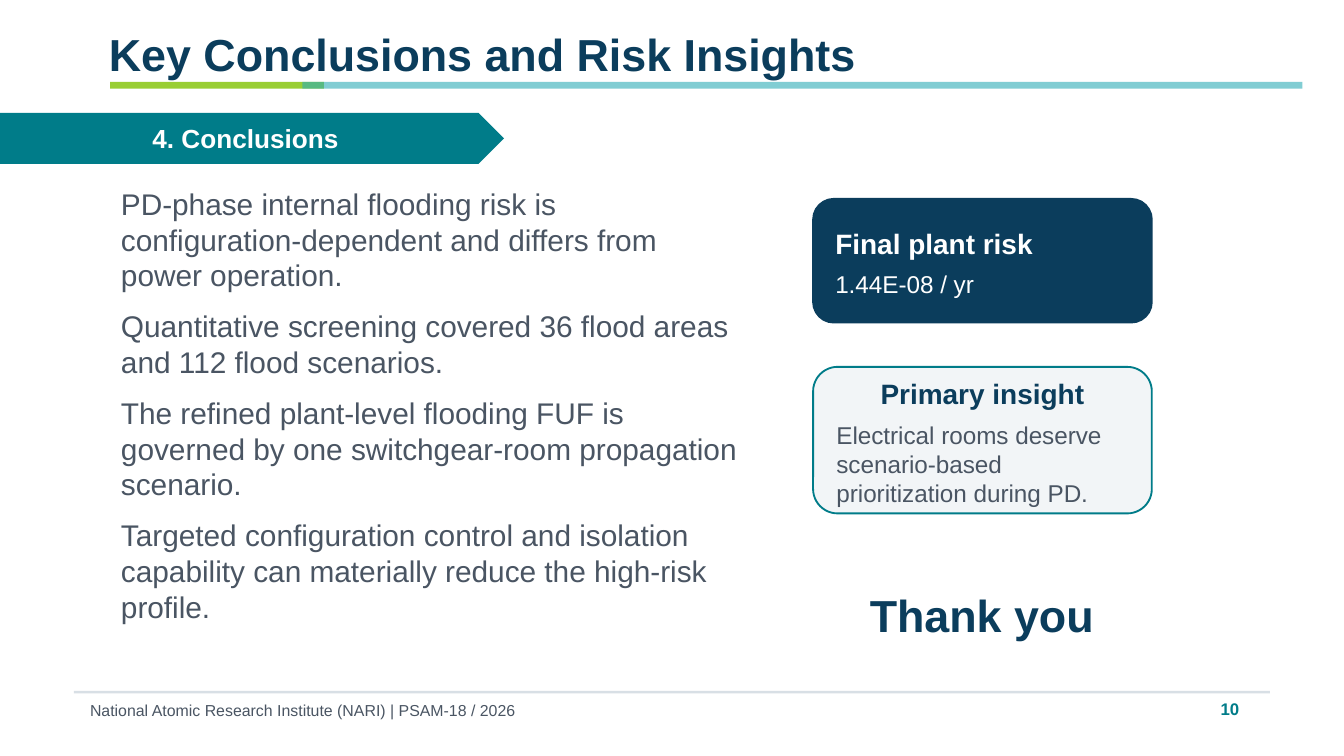
from lxml import etree
from pptx import Presentation
from pptx import util as u
from pptx.dml.color import RGBColor
from pptx.enum import shapes, text
from pptx.oxml.ns import qn

NAVY, TEAL, GREY, WHITE = "0B3D5C", "007C89", "4A5563", "FFFFFF"
KIND = shapes.MSO_SHAPE
ALIGN = text.PP_ALIGN
TIGHT = (0.05, 0.02, 0.05, 0.02)

POINTS = [
    "PD-phase internal flooding risk is configuration-dependent and differs from power operation.",
    "Quantitative screening covered 36 flood areas and 112 flood scenarios.",
    "The refined plant-level flooding FUF is governed by one switchgear-room propagation scenario.",
    "Targeted configuration control and isolation capability can materially reduce the high-risk profile.",
]


def paint(target, color):
    target.rgb = RGBColor.from_string(color)


def inset(frame, sides):
    frame.margin_left, frame.margin_top, frame.margin_right, frame.margin_bottom = map(u.Inches, sides)


def style(para, size, color, bold=False, align=ALIGN.LEFT):
    para.alignment = align
    for run in para.runs:
        run.font.name = "Arial"
        run.font.size = u.Pt(size)
        run.font.bold = bold
        paint(run.font.color, color)


def add_block(slide, kind, box, fill, line=None, alpha=None):
    """Add a filled shape; alpha is its opacity in percent."""
    block = slide.shapes.add_shape(kind, *map(u.Inches, box))
    block.shadow.inherit = False
    block.fill.solid()
    paint(block.fill.fore_color, fill)
    if alpha:
        tone = block.element.spPr.find(qn("a:solidFill"))[0]
        etree.SubElement(tone, qn("a:alpha")).set("val", str(alpha * 1000))
    if line:
        paint(block.line.color, line)
        block.line.width = u.Pt(1)
    else:
        block.line.fill.background()
    return block


def add_label(slide, box, lines, size, color, bold=False, align=ALIGN.LEFT, sides=TIGHT, after=0):
    frame = slide.shapes.add_textbox(*map(u.Inches, box)).text_frame
    frame.word_wrap = True
    frame.auto_size = text.MSO_AUTO_SIZE.SHAPE_TO_FIT_TEXT
    inset(frame, sides)
    frame.text = "\n".join(lines)
    for para in frame.paragraphs:
        style(para, size, color, bold, align)
        para.space_after = u.Pt(after)


def add_header(slide, left, top, title):
    rule = top + 0.43
    add_block(slide, KIND.RECTANGLE, (left + 0.06, rule, 1.59, 0.05), "80C201", alpha=80)
    add_block(slide, KIND.RECTANGLE, (left + 1.49, rule, 7.44, 0.05), "2DADB6", alpha=60)
    add_label(slide, (left, top, 8.45, 0.38), [title], 24, NAVY, True)


def add_banner(slide, box, title):
    frame = add_block(slide, KIND.PENTAGON, box, TEAL).text_frame
    frame.text = title
    frame.vertical_anchor = text.MSO_ANCHOR.MIDDLE
    style(frame.paragraphs[0], 14, WHITE, True, ALIGN.CENTER)


def add_footer(slide, left, top, width, source, number):
    add_block(slide, KIND.RECTANGLE, (left, top, width, 0.02), "D8DFE5")
    add_label(slide, (left + 0.07, top + 0.05, 6.6, 0.18), [source], 8.5, GREY)
    add_label(slide, (left + width - 0.6, top + 0.04, 0.42, 0.22), [number], 9, TEAL, True, ALIGN.RIGHT)


def add_card(slide, box, head, body, fill, line, tones, align=ALIGN.LEFT):
    """Add a rounded card; tones are the heading and body colours."""
    frame = add_block(slide, KIND.ROUNDED_RECTANGLE, box, fill, line).text_frame
    frame.word_wrap = True
    frame.vertical_anchor = text.MSO_ANCHOR.MIDDLE
    inset(frame, (0.12, 0.08, 0.12, 0.05))
    frame.text = f"{head}\n{body}"
    first, second = frame.paragraphs
    style(first, 15, tones[0], True, align)
    style(second, 13, tones[1])
    second.space_before = u.Pt(5)


def add_cards(slide, left, top, width):
    add_card(slide, (left, top, width, 0.92), "Final plant risk", "1.44E-08 / yr",
             NAVY, NAVY, (WHITE, WHITE))
    add_card(slide, (left, top + 1.25, width, 1.09), "Primary insight",
             "Electrical rooms deserve scenario-based prioritization during PD.",
             "F2F5F7", TEAL, (NAVY, GREY), ALIGN.CENTER)


def main():
    deck = Presentation()
    deck.slide_width, deck.slide_height = u.Inches(10), u.Inches(10 * 9 / 16)
    slide = deck.slides.add_slide(deck.slide_layouts[6])
    add_header(slide, 0.76, 0.18, "Key Conclusions and Risk Insights")
    add_banner(slide, (0, 0.84, 3.75, 0.38), "4. Conclusions")
    add_footer(slide, 0.55, 5.14, 8.9,
               "National Atomic Research Institute (NARI) | PSAM-18 / 2026", "10")
    add_label(slide, (0.82, 1.35, 4.75, 3.45), POINTS, 16, GREY,
              sides=(0.08, 0.03, 0.05, 0.03), after=8)
    add_cards(slide, 6.05, 1.48, 2.52)
    add_label(slide, (5.88, 4.35, 2.85, 0.38), ["Thank you"], 24, NAVY, True, ALIGN.CENTER)
    deck.save("out.pptx")


if __name__ == "__main__":
    main()
